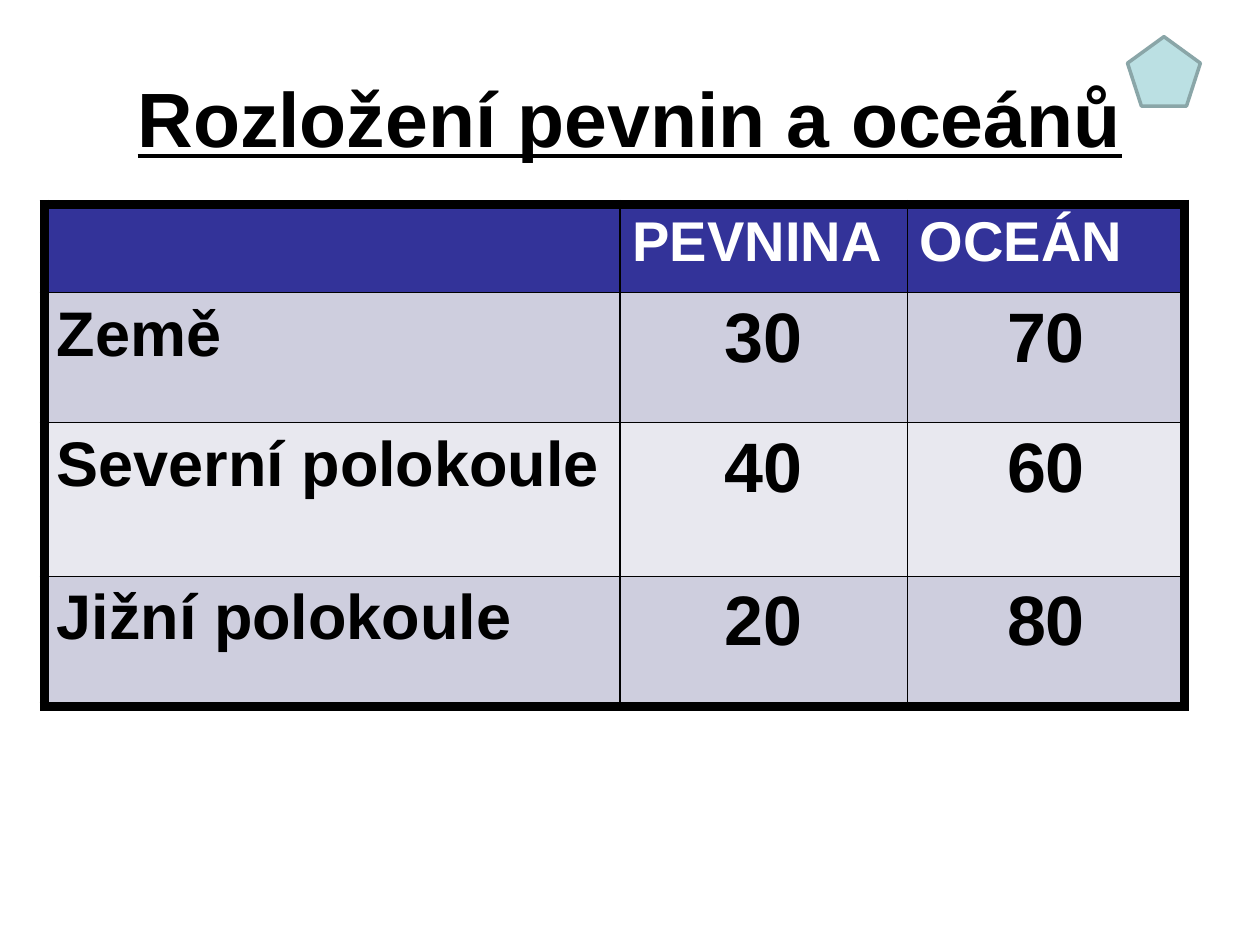
from lxml import etree
from pptx import Presentation
from pptx.dml.color import RGBColor
from pptx.enum.shapes import MSO_SHAPE
from pptx.enum.text import MSO_ANCHOR, PP_ALIGN
from pptx.oxml.ns import qn
from pptx.util import Cm, Pt

PENTAGON = MSO_SHAPE.REGULAR_PENTAGON
MIDDLE = MSO_ANCHOR.MIDDLE
LEFT, CENTER = PP_ALIGN.LEFT, PP_ALIGN.CENTER

BLACK = RGBColor(0x00, 0x00, 0x00)
WHITE = RGBColor(0xFF, 0xFF, 0xFF)
NAVY = RGBColor(0x33, 0x33, 0x99)
LILAC = RGBColor(0xCE, 0xCE, 0xDE)
PALE = RGBColor(0xE8, 0xE8, 0xEF)
AQUA = RGBColor(0xBB, 0xE0, 0xE3)
TEAL = RGBColor(0x8A, 0xA6, 0xA8)

FONT = "Arial"
TITLE = "Rozložení pevnin a oceánů"
ROWS = [
    ("", "PEVNINA", "OCEÁN"),
    ("Země", "30", "70"),
    ("Severní polokoule", "40", "60"),
    ("Jižní polokoule", "20", "80"),
]
COLUMN_WIDTHS = [Cm(11.61), Cm(5.79), Cm(5.59)]
ROW_HEIGHTS = [Cm(1.78), Cm(2.62), Cm(3.1), Cm(2.62)]
OUTER, INNER = Pt(6), Pt(1)


def format_text(frame, size, color, alignment):
    for para in frame.paragraphs:
        para.alignment = alignment
        for span in para.runs:
            span.font.name = FONT
            span.font.size = Pt(size)
            span.font.bold = True
            span.font.color.rgb = color


def add_borders(cell, edges):
    properties = cell._tc.get_or_add_tcPr()
    for tag, is_outer in edges.items():
        width = OUTER if is_outer else INNER
        line = etree.SubElement(properties, qn(f"a:{tag}"), w=str(width))
        fill = etree.SubElement(line, qn("a:solidFill"))
        etree.SubElement(fill, qn("a:srgbClr"), val=str(BLACK))


def add_title(page):
    box = page.shapes.title
    box.left, box.top, box.width, box.height = Cm(1.27), Cm(0.76), Cm(22.86), Cm(3.18)
    frame = box.text_frame
    frame.text = TITLE
    frame.vertical_anchor = MIDDLE
    format_text(frame, 44, BLACK, CENTER)
    frame.paragraphs[0].runs[0].font.underline = True


def add_land_ocean_table(page):
    last_row, last_column = len(ROWS) - 1, len(COLUMN_WIDTHS) - 1
    table = page.shapes.add_table(
        len(ROWS), len(COLUMN_WIDTHS), Cm(0.89), Cm(4.12),
        sum(COLUMN_WIDTHS), sum(ROW_HEIGHTS),
    ).table
    for column, width in zip(table.columns, COLUMN_WIDTHS):
        column.width = width
    for r, values in enumerate(ROWS):
        table.rows[r].height = ROW_HEIGHTS[r]
        for c, value in enumerate(values):
            cell = table.cell(r, c)
            add_borders(cell, {
                "lnL": c == 0, "lnR": c == last_column,
                "lnT": r == 0, "lnB": r == last_row,
            })
            cell.fill.solid()
            cell.text_frame.text = value
            if r == 0:
                cell.fill.fore_color.rgb = NAVY
                format_text(cell.text_frame, 32, WHITE, LEFT)
            else:
                cell.fill.fore_color.rgb = LILAC if r % 2 else PALE
                size, alignment = (36, LEFT) if c == 0 else (40, CENTER)
                format_text(cell.text_frame, size, BLACK, alignment)


def add_pentagon(page):
    pentagon = page.shapes.add_shape(PENTAGON, Cm(22.73), Cm(0.74), Cm(1.47), Cm(1.4))
    pentagon.shadow.inherit = False
    pentagon.fill.solid()
    pentagon.fill.fore_color.rgb = AQUA
    pentagon.line.color.rgb = TEAL
    pentagon.line.width = Pt(2)


def main():
    deck = Presentation()
    deck.slide_width, deck.slide_height = Cm(25.4), Cm(19.05)
    page = deck.slides.add_slide(deck.slide_layouts[5])
    add_title(page)
    add_land_ocean_table(page)
    add_pentagon(page)
    deck.save("out.pptx")


if __name__ == "__main__":
    main()
